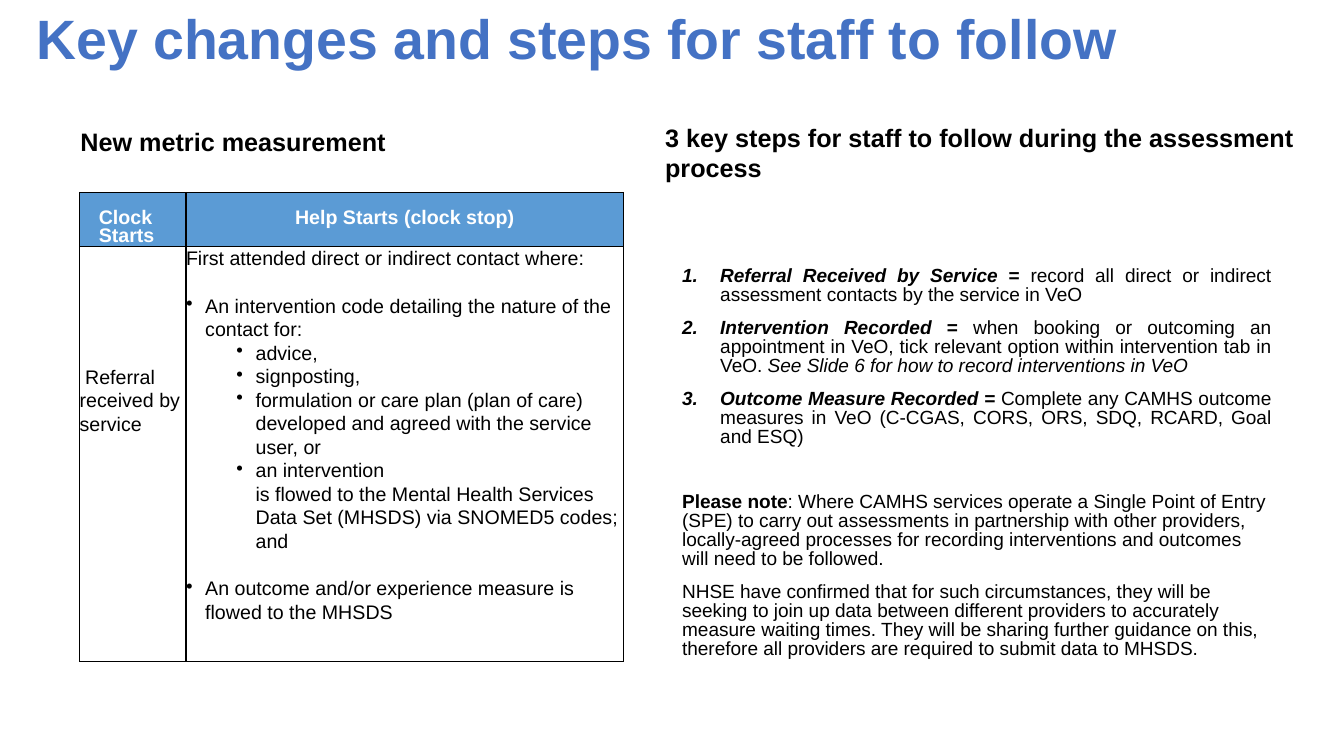
from lxml import etree
from pptx import Presentation
from pptx.dml.color import RGBColor
from pptx.enum.text import MSO_ANCHOR as Anchor, MSO_AUTO_SIZE as AutoSize, PP_ALIGN as Align
from pptx.oxml.ns import qn
from pptx.util import Pt

FONT = "Arial"
COLORS = {"title": "4472C4", "header": "5B9BD5", "text": "000000", "white": "FFFFFF"}
BODY_SIZE, STEP_SIZE = 14, 13.6
BLANK_LINE = 16.9

CRITERIA = [
    (None, "First attended direct or indirect contact where:", 0, 0),
    ("•", "An intervention code detailing the nature of the contact for:", 13.7, BLANK_LINE),
    ("•", "advice,", 49.7, 0),
    ("•", "signposting,", 49.7, 0),
    ("•", "formulation or care plan (plan of care) developed and agreed with the service user, or", 49.7, 0),
    ("•", "an intervention", 49.7, 0),
    (None, "is flowed to the Mental Health Services Data Set (MHSDS) via SNOMED5 codes; and", 49.7, 0),
    ("•", "An outcome and/or experience measure is flowed to the MHSDS", 13.7, BLANK_LINE),
]
STEPS = [
    [("Referral Received by Service ", True, True), ("=", True, False),
     (" record all direct or indirect assessment contacts by the service in VeO", False, False)],
    [("Intervention Recorded ", True, True), ("= ", True, False),
     ("when booking or outcoming an appointment in VeO, tick relevant option within "
      "intervention tab in VeO. ", False, False),
     ("See Slide 6 for how to record interventions in VeO", False, True)],
    [("Outcome Measure Recorded = ", True, True),
     ("Complete any CAMHS outcome measures in VeO (C-CGAS, CORS, ORS, SDQ, RCARD, Goal and ESQ)",
      False, False)],
]
NOTES = [
    [("Please note", True, False),
     (": Where CAMHS services operate a Single Point of Entry (SPE) to carry out assessments in "
      "partnership with other providers, locally-agreed processes for recording interventions "
      "and outcomes will need to be followed.", False, False)],
    [("NHSE have confirmed that for such circumstances, they will be seeking to join up data "
      "between different providers to accurately measure waiting times. They will be sharing "
      "further guidance on this, therefore all providers are required to submit data to MHSDS.",
      False, False)],
]


def set_font(font, size, color="text", bold=False, italic=False):
    """Apply the slide's typeface with the given size, colour and style."""
    font.name, font.size, font.bold, font.italic = FONT, Pt(size), bold, italic
    font.color.rgb = RGBColor.from_string(COLORS[color])


def set_list_format(paragraph, margin, indent, tag=None, **attributes):
    """Set a paragraph's indents and, when a tag is given, its bullet or number."""
    properties = paragraph._p.get_or_add_pPr()
    properties.set("marL", str(Pt(margin)))
    properties.set("indent", str(Pt(indent)))
    if tag:
        etree.SubElement(properties, qn(tag), **attributes)


def next_paragraph(frame, is_first):
    """Return the frame's first paragraph or add a new one."""
    return frame.paragraphs[0] if is_first else frame.add_paragraph()


def add_title(slide, left, top, width, height):
    """Move and format the title placeholder."""
    title = slide.shapes.title
    title.left, title.top, title.width, title.height = map(Pt, (left, top, width, height))
    frame = title.text_frame
    frame.auto_size, frame.vertical_anchor = AutoSize.NONE, Anchor.TOP
    frame.margin_top = frame.margin_bottom = 0
    frame.text = "Key changes and steps for staff to follow"
    paragraph = frame.paragraphs[0]
    paragraph.alignment, paragraph.line_spacing = Align.LEFT, 0.9
    set_font(paragraph.font, 39.6, "title", bold=True)


def add_heading(slide, text, left, top, width, height):
    """Add a bold heading above one column."""
    frame = slide.shapes.add_textbox(*map(Pt, (left, top, width, height))).text_frame
    frame.word_wrap = True
    frame.text = text
    set_font(frame.paragraphs[0].font, 18, bold=True)


def format_cell(cell, margin_top):
    """Remove a cell's side insets and draw its thin black borders."""
    cell.margin_left = cell.margin_right = cell.margin_bottom = 0
    cell.margin_top = Pt(margin_top)
    cell.vertical_anchor = Anchor.TOP
    properties = cell._tc.get_or_add_tcPr()
    for side in ("a:lnL", "a:lnR", "a:lnT", "a:lnB"):
        line = etree.SubElement(properties, qn(side), w=str(Pt(1)))
        fill = etree.SubElement(line, qn("a:solidFill"))
        etree.SubElement(fill, qn("a:srgbClr"), val=COLORS["text"])


def add_metric_table(slide, left, top, width, height):
    """Add the table of clock start and clock stop rules."""
    table = slide.shapes.add_table(2, 2, *map(Pt, (left, top, width, height))).table
    table.first_row = table.horz_banding = False
    start_width, header_height = 76, 38.6
    table.columns[0].width, table.columns[1].width = Pt(start_width), Pt(width - start_width)
    table.rows[0].height, table.rows[1].height = Pt(header_height), Pt(height - header_height)

    headers = [("Clock Starts", Align.LEFT, 13.7), ("Help Starts (clock stop)", Align.CENTER, 0)]
    for column, (text, alignment, margin) in enumerate(headers):
        cell = table.cell(0, column)
        format_cell(cell, 12.8)
        cell.fill.solid()
        cell.fill.fore_color.rgb = RGBColor.from_string(COLORS["header"])
        cell.text = text
        paragraph = cell.text_frame.paragraphs[0]
        set_list_format(paragraph, margin, 0)
        paragraph.alignment, paragraph.line_spacing = alignment, Pt(12.8)
        set_font(paragraph.font, BODY_SIZE, "white", bold=True)

    referral = [(None, "Referral received by service", 0, 0)]
    for column, (entries, margin_top) in enumerate([(referral, 5 * BLANK_LINE), (CRITERIA, 0)]):
        cell = table.cell(1, column)
        format_cell(cell, margin_top)
        cell.fill.background()
        for index, (bullet, text, margin, space_before) in enumerate(entries):
            paragraph = next_paragraph(cell.text_frame, index == 0)
            paragraph.text = text
            if bullet:
                set_list_format(paragraph, margin, -13.7, "a:buChar", char=bullet)
            else:
                set_list_format(paragraph, margin, 3.9 if column == 0 else 0)
            paragraph.line_spacing, paragraph.space_before = 1.07, Pt(space_before)
            set_font(paragraph.font, BODY_SIZE)


def add_steps(slide, left, top, width, height):
    """Add the numbered steps and the notes below them."""
    frame = slide.shapes.add_textbox(*map(Pt, (left, top, width, height))).text_frame
    frame.word_wrap = True
    frame.margin_top = Pt(53.4)
    for index, runs in enumerate(STEPS + NOTES):
        paragraph = next_paragraph(frame, index == 0)
        if index < len(STEPS):
            set_list_format(paragraph, 27.2, -27.2, "a:buAutoNum", type="arabicPeriod")
            paragraph.alignment = Align.JUSTIFY
        paragraph.line_spacing = 0.83
        paragraph.space_before = Pt({0: 0, len(STEPS): 33}.get(index, 10))
        for text, bold, italic in runs:
            run = paragraph.add_run()
            run.text = text
            set_font(run.font, STEP_SIZE, bold=bold, italic=italic)


def main():
    """Build the slide and save it."""
    presentation = Presentation()
    presentation.slide_width, presentation.slide_height = Pt(960), Pt(540)
    slide = presentation.slides.add_slide(presentation.slide_layouts[5])
    add_title(slide, 18.7, 8, 828, 41)
    add_metric_table(slide, 56.9, 137.5, 388.5, 335)
    add_heading(slide, "New metric measurement", 50.4, 86.4, 313, 29)
    add_heading(slide, "3 key steps for staff to follow during the assessment process",
                468, 83.5, 480, 51)
    add_steps(slide, 480.2, 137.5, 435, 335.5)
    presentation.save("out.pptx")


if __name__ == "__main__":
    main()
